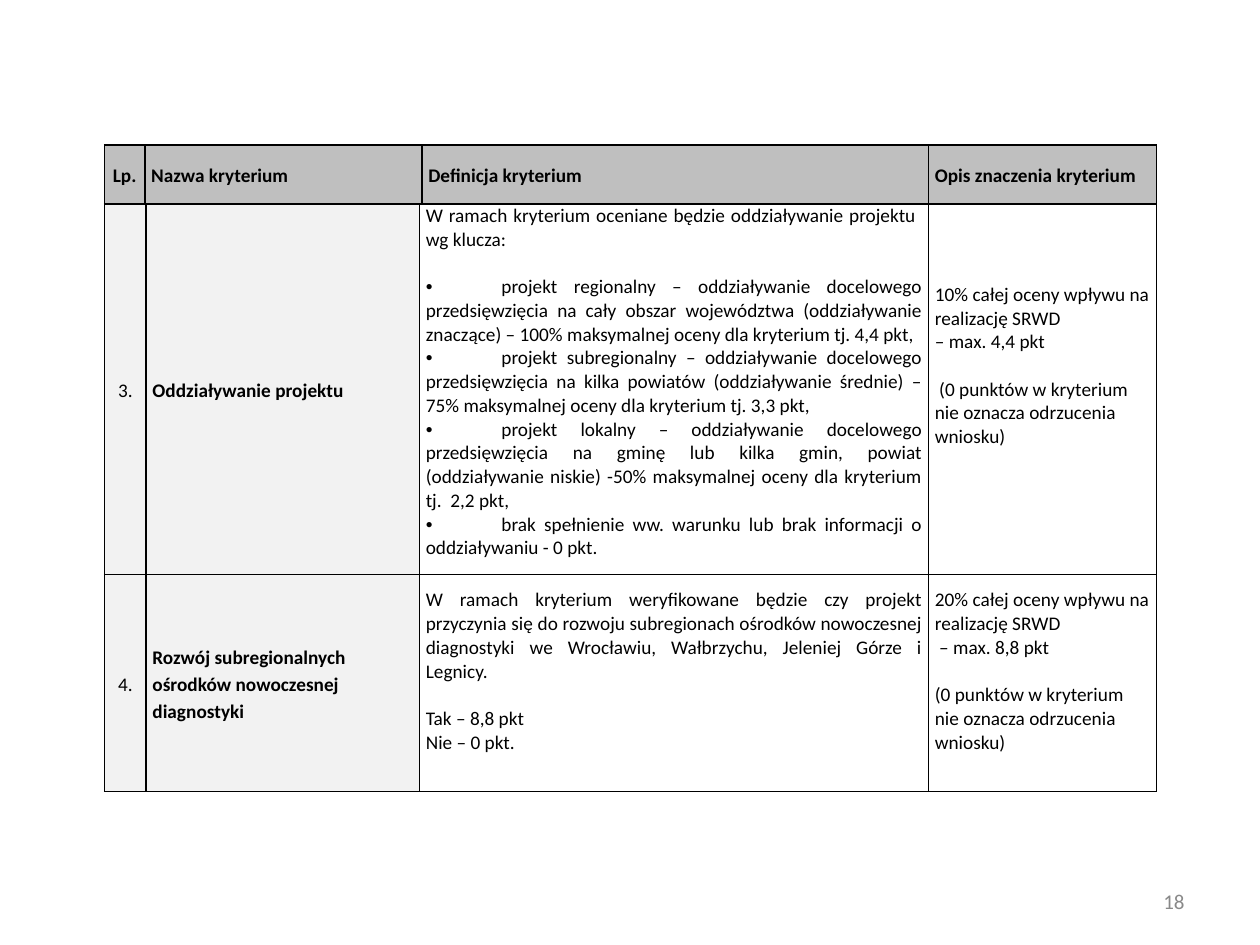
from dataclasses import dataclass
from typing import Any

from lxml.etree import SubElement
from pptx import Presentation
from pptx.dml.color import RGBColor
from pptx.enum.text import MSO_ANCHOR, PP_ALIGN
from pptx.oxml.ns import qn
from pptx.util import Inches, Pt

SLIDE_WIDTH, SLIDE_HEIGHT = Inches(10), Inches(7.5)
TABLE_LEFT = 8.3
LINE_HEIGHT = Pt(13.4)
BULLET_TAB = Inches(0.6)
BLACK, WHITE, HEADER_GREY, LABEL_GREY, NUMBER_GREY = "000000", "FFFFFF", "BFBFBF", "F2F2F2", "898989"
LABEL_SPACING = {"line_spacing": 1.15, "space_after": Pt(10)}
CELL_FORMAT = {
    "margin_left": Inches(0.05),
    "margin_right": Inches(0.05),
    "margin_top": 0,
    "vertical_anchor": MSO_ANCHOR.MIDDLE,
}


@dataclass(frozen=True)
class Line:
    text: str
    bullet: bool = False
    gap_before: bool = False


@dataclass(frozen=True)
class CellContent:
    lines: tuple[Line, ...]
    fill: str = WHITE
    bold: bool = False
    align: PP_ALIGN = PP_ALIGN.LEFT
    label: bool = False
    lines_below: int = 0


@dataclass(frozen=True)
class Grid:
    top: float
    columns: tuple[float, ...]
    rows: tuple[float, ...]
    cells: tuple[tuple[CellContent, ...], ...]


def across(percent: float) -> int:
    return round(SLIDE_WIDTH * percent / 100)


def down(percent: float) -> int:
    return round(SLIDE_HEIGHT * percent / 100)


def colour(value: str) -> RGBColor:
    return RGBColor.from_string(value)


def apply(target: Any, values: dict[str, Any]) -> None:
    for name, value in values.items():
        setattr(target, name, value)


def label(text: str, fill: str = LABEL_GREY, bold: bool = True,
          align: PP_ALIGN = PP_ALIGN.LEFT) -> CellContent:
    return CellContent((Line(text),), fill, bold, align, label=True)


def number(text: str) -> CellContent:
    return label(text, bold=False, align=PP_ALIGN.CENTER)


def definition(*lines: Line) -> CellContent:
    return CellContent(lines, align=PP_ALIGN.JUSTIFY, lines_below=1)


def weight(lines_below: int, *lines: Line) -> CellContent:
    return CellContent(lines, lines_below=lines_below)


def style_font(font: Any, size: float, shade: str, bold: bool = False) -> None:
    apply(font, {"name": "Calibri", "size": Pt(size), "bold": bold})
    font.color.rgb = colour(shade)


def add_bullet(para: Any) -> None:
    properties = para._p.get_or_add_pPr()
    apply_values = {"marL": "0", "indent": "0"}
    for name, value in apply_values.items():
        properties.set(name, value)
    SubElement(properties, qn("a:buFont"), typeface="Arial")
    SubElement(properties, qn("a:buChar"), char="•")
    tabs = SubElement(properties, qn("a:tabLst"))
    SubElement(tabs, qn("a:tab"), pos=str(BULLET_TAB), algn="l")


def add_borders(cell: Any) -> None:
    properties = cell._tc.get_or_add_tcPr()
    for side in ("lnL", "lnR", "lnT", "lnB"):
        border = SubElement(properties, qn(f"a:{side}"), w=str(Pt(1)))
        fill = SubElement(border, qn("a:solidFill"))
        SubElement(fill, qn("a:srgbClr"), val=BLACK)


def fill_cell(cell: Any, content: CellContent) -> None:
    apply(cell, CELL_FORMAT | {"margin_bottom": content.lines_below * LINE_HEIGHT})
    add_borders(cell)
    cell.fill.solid()
    cell.fill.fore_color.rgb = colour(content.fill)
    frame = cell.text_frame
    for index, line in enumerate(content.lines):
        para = frame.paragraphs[0] if index == 0 else frame.add_paragraph()
        if line.bullet:
            add_bullet(para)
        apply(para, {"alignment": content.align} | (LABEL_SPACING if content.label else {}))
        if line.gap_before:
            para.space_before = LINE_HEIGHT
        span = para.add_run()
        span.text = "\t" + line.text if line.bullet else line.text
        style_font(span.font, 11, BLACK, content.bold)


def draw_grid(page: Any, grid: Grid) -> None:
    table = page.shapes.add_table(
        len(grid.rows), len(grid.columns), across(TABLE_LEFT), down(grid.top),
        across(sum(grid.columns)), down(sum(grid.rows))).table
    apply(table, {"first_row": False, "horz_banding": False})
    for column, width in zip(table.columns, grid.columns):
        column.width = across(width)
    for row, height, contents in zip(table.rows, grid.rows, grid.cells):
        row.height = down(height)
        for cell, content in zip(row.cells, contents):
            fill_cell(cell, content)


def draw_page_number(page: Any, text: str) -> None:
    box = page.shapes.add_textbox(across(71.7), down(92.67), across(23.3), down(5.33))
    apply(box.text_frame, {"word_wrap": True, "vertical_anchor": MSO_ANCHOR.MIDDLE})
    para = box.text_frame.paragraphs[0]
    para.alignment = PP_ALIGN.RIGHT
    span = para.add_run()
    span.text = text
    style_font(span.font, 12, NUMBER_GREY)


HEADER = Grid(15.33, (3.2, 22, 40.2, 18.1), (6.27,), ((
    label("Lp.", HEADER_GREY, align=PP_ALIGN.CENTER),
    *(label(text, HEADER_GREY) for text in (
        "Nazwa kryterium", "Definicja kryterium", "Opis znaczenia kryterium")),
),))

CRITERIA = Grid(21.6, (3.3, 21.7, 40.4, 18.1), (39.07, 22.93), (
    (
        number("3."),
        label("Oddziaływanie projektu"),
        definition(
            Line("W ramach kryterium oceniane będzie oddziaływanie projektu  wg klucza:"),
            Line("projekt regionalny – oddziaływanie docelowego przedsięwzięcia na cały obszar województwa "
                 "(oddziaływanie znaczące) – 100% maksymalnej oceny dla kryterium tj. 4,4 pkt,", True, True),
            Line("projekt subregionalny – oddziaływanie docelowego przedsięwzięcia na kilka powiatów "
                 "(oddziaływanie średnie) – 75% maksymalnej oceny dla kryterium tj. 3,3 pkt,", True),
            Line("projekt lokalny – oddziaływanie docelowego przedsięwzięcia na gminę lub kilka gmin, powiat "
                 "(oddziaływanie niskie) -50% maksymalnej oceny dla kryterium tj.  2,2 pkt,", True),
            Line("brak spełnienie ww. warunku lub brak informacji o oddziaływaniu - 0 pkt.", True),
        ),
        weight(
            2,
            Line("10% całej oceny wpływu na realizację SRWD"),
            Line("– max. 4,4 pkt"),
            Line(" (0 punktów w kryterium nie oznacza odrzucenia wniosku)", gap_before=True),
        ),
    ),
    (
        number("4."),
        label("Rozwój subregionalnych ośrodków nowoczesnej diagnostyki"),
        definition(
            Line("W ramach kryterium weryfikowane będzie czy projekt przyczynia się do rozwoju subregionach "
                 "ośrodków nowoczesnej diagnostyki we Wrocławiu, Wałbrzychu, Jeleniej Górze i Legnicy."),
            Line("Tak – 8,8 pkt", gap_before=True),
            Line("Nie – 0 pkt."),
        ),
        weight(
            1,
            Line("20% całej oceny wpływu na realizację SRWD"),
            Line(" – max. 8,8 pkt"),
            Line("(0 punktów w kryterium nie oznacza odrzucenia wniosku)", gap_before=True),
        ),
    ),
))


def main() -> None:
    deck = Presentation()
    apply(deck, {"slide_width": SLIDE_WIDTH, "slide_height": SLIDE_HEIGHT})
    page = deck.slides.add_slide(deck.slide_layouts[6])
    draw_page_number(page, "18")
    for grid in (HEADER, CRITERIA):
        draw_grid(page, grid)
    deck.save("out.pptx")


if __name__ == "__main__":
    main()
